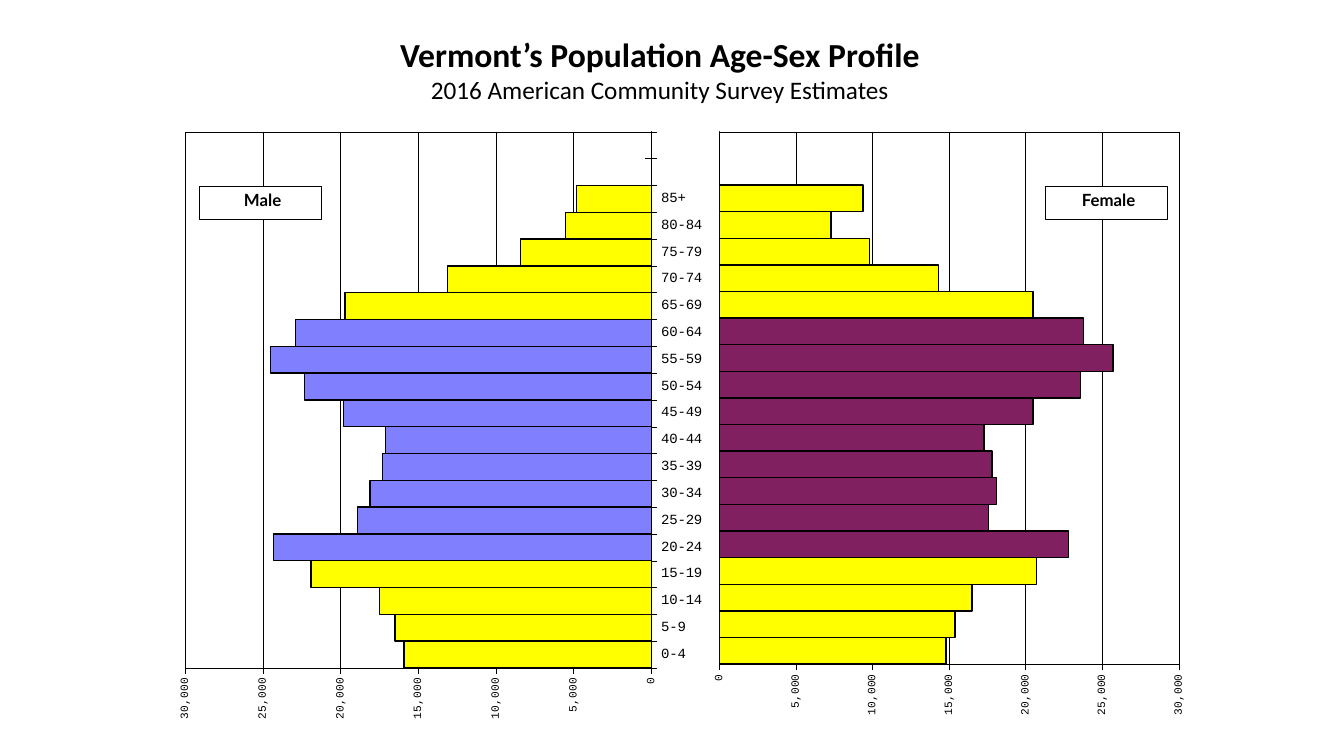
import pptx
import pptx.chart.data
import pptx.dml.color
import pptx.enum.chart
import pptx.enum.text
import pptx.oxml
import pptx.oxml.ns
import pptx.util

Inches = pptx.util.Inches
Pt = pptx.util.Pt
TICK = pptx.enum.chart.XL_TICK_MARK

BLACK, WHITE, YELLOW = "000000", "FFFFFF", "FFFF00"
AGES = [f"{age}-{age + 4}" for age in range(0, 85, 5)] + ["85+", "", ""]
WORKING_AGES = range(4, 13)
AXIS_MAX, AXIS_STEP = 30000, 5000

PYRAMID_SIDES = [
    {"name": "Female", "at": (6.69, 1.25, 5.21, 6.41), "plot": (0.085, 0.009, 0.875, 0.824),
     "color": "802060", "reverse": False, "label_left": 10.37,
     "values": [14800, 15400, 16500, 20700, 22800, 17600, 18100, 17800, 17300, 20500,
                23600, 25700, 23800, 20500, 14300, 9800, 7300, 9400, None, 0]},
    {"name": "Male", "at": (1.66, 1.25, 5.48, 6.41), "plot": (0.032, 0.009, 0.844, 0.83),
     "color": "8080FF", "reverse": True, "label_left": 1.98,
     "values": [15900, 16500, 17500, 21900, 24300, 18900, 18100, 17300, 17100, 19800,
                22300, 24500, 22900, 19700, 13100, 8400, 5500, 4800, None, 0]},
]
LABEL_TOP, LABEL_WIDTH, LABEL_HEIGHT = 1.85, 1.21, 0.33
TITLE_AT = (1.76, 0.29, 9.57, 0.81)
TITLE_LINES = [
    ("Vermont’s Population Age-Sex Profile", {"size": Pt(24), "bold": True, "name": "Calibri"}),
    ("2016 American Community Survey Estimates", {"size": Pt(18), "bold": False, "name": "Calibri"}),
]


def rgb(color):
    return pptx.dml.color.RGBColor.from_string(color)


def set_values(target, values):
    for name, value in values.items():
        setattr(target, name, value)


def set_font(font, values):
    set_values(font, values)
    font.color.rgb = rgb(BLACK)


def set_fill(fill, color):
    fill.solid()
    fill.fore_color.rgb = rgb(color)


def set_line(line, width):
    set_fill(line.fill, BLACK)
    line.width = Pt(width)


def set_plot_area(chart, plot):
    namespaces = pptx.oxml.ns.nsdecls("c", "a")
    plot_area = chart.plots[0]._element.getparent()
    for layout in plot_area.findall(pptx.oxml.ns.qn("c:layout")):
        plot_area.remove(layout)
    sizes = "".join(f'<c:{tag} val="{value}"/>' for tag, value in zip("xywh", plot))
    plot_area.insert(0, pptx.oxml.parse_xml(
        f'<c:layout {namespaces}><c:manualLayout><c:layoutTarget val="inner"/>'
        f'<c:xMode val="edge"/><c:yMode val="edge"/>{sizes}</c:manualLayout></c:layout>'))
    plot_area.append(pptx.oxml.parse_xml(
        f'<c:spPr {namespaces}><a:noFill/><a:ln w="3175"><a:solidFill>'
        f'<a:srgbClr val="{BLACK}"/></a:solidFill></a:ln></c:spPr>'))


def add_pyramid_side(slide, side):
    data = pptx.chart.data.CategoryChartData()
    data.categories = AGES
    data.add_series(side["name"], side["values"])
    chart = slide.shapes.add_chart(
        pptx.enum.chart.XL_CHART_TYPE.BAR_CLUSTERED, *map(Inches, side["at"]), data).chart
    set_values(chart, {"has_legend": False, "has_title": False})
    set_font(chart.font, {"name": "Courier New", "size": Pt(10)})
    set_values(chart.plots[0], {"gap_width": 0, "vary_by_categories": False})

    series = chart.plots[0].series[0]
    series.invert_if_negative = False
    set_fill(series.format.fill, side["color"])
    set_line(series.format.line, 1)
    for index in range(18):
        if index not in WORKING_AGES:
            point = series.points[index].format
            set_fill(point.fill, YELLOW)
            set_line(point.line, 1)

    ages, counts = chart.category_axis, chart.value_axis
    set_values(ages, {"visible": side["reverse"], "has_major_gridlines": False,
                      "major_tick_mark": TICK.CROSS, "minor_tick_mark": TICK.NONE})
    set_values(counts, {"minimum_scale": 0, "maximum_scale": AXIS_MAX, "major_unit": AXIS_STEP,
                        "reverse_order": side["reverse"], "has_major_gridlines": True,
                        "major_tick_mark": TICK.OUTSIDE, "minor_tick_mark": TICK.NONE})
    set_values(counts.tick_labels, {"number_format": "#,##0", "number_format_is_linked": False})
    for axis, size in ((ages, 10), (counts, 8)):
        set_line(axis.format.line, 0.25)
        set_font(axis.tick_labels.font, {"name": "Courier New", "size": Pt(size)})
    set_line(counts.major_gridlines.format.line, 0.25)
    count_text = counts._element.find(pptx.oxml.ns.qn("c:txPr"))
    set_rotation = count_text.find(pptx.oxml.ns.qn("a:bodyPr")).set
    set_rotation("rot", "-5400000")
    set_rotation("vert", "horz")
    set_plot_area(chart, side["plot"])


def write_line(paragraph, text, font):
    paragraph.alignment = pptx.enum.text.PP_ALIGN.CENTER
    run = paragraph.add_run()
    run.text = text
    set_font(run.font, font)


def add_label(slide, side):
    label = slide.shapes.add_shape(
        pptx.enum.shapes.MSO_SHAPE.RECTANGLE,
        *map(Inches, (side["label_left"], LABEL_TOP, LABEL_WIDTH, LABEL_HEIGHT)))
    label.shadow.inherit = False
    set_fill(label.fill, WHITE)
    set_line(label.line, 0.75)
    set_values(label.text_frame, {
        "margin_left": Inches(0.04), "margin_top": Inches(0.03), "margin_right": 0,
        "margin_bottom": 0, "vertical_anchor": pptx.enum.text.MSO_ANCHOR.TOP})
    write_line(label.text_frame.paragraphs[0], side["name"],
               {"name": "Lato", "size": Pt(12), "bold": True})


def add_title(slide):
    frame = slide.shapes.add_textbox(*map(Inches, TITLE_AT)).text_frame
    set_values(frame, {"word_wrap": True,
                       "auto_size": pptx.enum.text.MSO_AUTO_SIZE.SHAPE_TO_FIT_TEXT})
    for index, (text, font) in enumerate(TITLE_LINES):
        paragraph = frame.add_paragraph() if index else frame.paragraphs[0]
        write_line(paragraph, text, font)


def main():
    presentation = pptx.Presentation()
    set_values(presentation, {"slide_width": Inches(13.33), "slide_height": Inches(7.5)})
    slide = presentation.slides.add_slide(presentation.slide_layouts[6])
    for side in PYRAMID_SIDES:
        add_pyramid_side(slide, side)
    for side in reversed(PYRAMID_SIDES):
        add_label(slide, side)
    add_title(slide)
    presentation.save("out.pptx")


if __name__ == "__main__":
    main()
